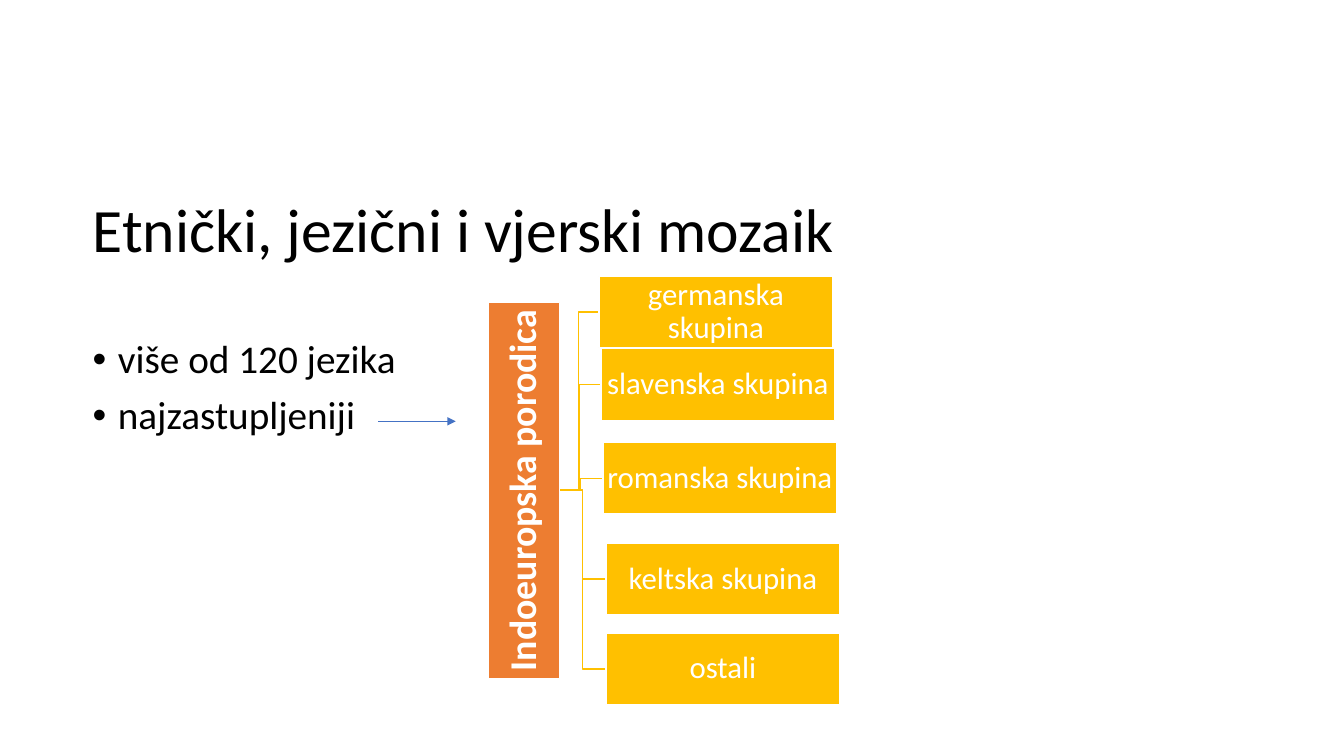
from lxml import etree
from pptx import Presentation
from pptx.dml.color import RGBColor
from pptx.enum.shapes import MSO_CONNECTOR, MSO_SHAPE
from pptx.enum.text import MSO_ANCHOR, PP_ALIGN
from pptx.oxml.ns import qn
from pptx.util import Inches, Pt

RECTANGLE = MSO_SHAPE.RECTANGLE
STRAIGHT = MSO_CONNECTOR.STRAIGHT
MIDDLE, TOP = MSO_ANCHOR.MIDDLE, MSO_ANCHOR.TOP
CENTER, LEFT = PP_ALIGN.CENTER, PP_ALIGN.LEFT

COLORS = {
    "text": "000000",
    "white": "FFFFFF",
    "family": "ED7D31",
    "group": "FFC000",
    "arrow": "4472C4",
}


class SlideBuilder:
    font_name = "Calibri"
    line_spacing = 0.9

    def __init__(self, slide):
        self.slide = slide

    def color(self, name):
        return RGBColor.from_string(COLORS[name])

    def set_line(self, line, color, width):
        line.color.rgb = self.color(color)
        line.width = Pt(width)

    def fill_text(self, shape, lines, size, color, align=LEFT, anchor=TOP,
                  margin=0, bold=False, bullets=False):
        frame = shape.text_frame
        frame.word_wrap = True
        frame.vertical_anchor = anchor
        frame.margin_left = frame.margin_right = Inches(margin)
        frame.margin_top = frame.margin_bottom = Inches(margin)
        for index, line in enumerate(lines):
            paragraph = frame.add_paragraph() if index else frame.paragraphs[0]
            paragraph.text = line
            paragraph.alignment = align
            paragraph.line_spacing = self.line_spacing
            if index:
                paragraph.space_before = Pt(10)
            if bullets:
                self.add_bullet(paragraph)
            paragraph.font.name = self.font_name
            paragraph.font.size = Pt(size)
            paragraph.font.bold = bold
            paragraph.font.color.rgb = self.color(color)

    def add_bullet(self, paragraph):
        properties = paragraph._p.get_or_add_pPr()
        properties.set("marL", str(Inches(0.25)))
        properties.set("indent", str(Inches(-0.25)))
        etree.SubElement(properties, qn("a:buFont")).set("typeface", "Arial")
        etree.SubElement(properties, qn("a:buChar")).set("char", "•")

    def text(self, left, top, width, height, lines, size, bullets=False):
        box = self.slide.shapes.add_textbox(
            Inches(left), Inches(top), Inches(width), Inches(height))
        self.fill_text(box, lines, size, "text", bullets=bullets)

    def block(self, left, top, width, height, label, fill, size,
              bold=False, rotation=0):
        shape = self.slide.shapes.add_shape(
            RECTANGLE, Inches(left), Inches(top), Inches(width), Inches(height))
        shape.shadow.inherit = False
        shape.rotation = rotation
        shape.fill.solid()
        shape.fill.fore_color.rgb = self.color(fill)
        self.set_line(shape.line, "white", 1)
        self.fill_text(shape, [label], size, "white", CENTER, MIDDLE, 0.02, bold)

    def branch(self, start_x, start_y, end_x, end_y):
        middle_x = (start_x + end_x) / 2
        corners = [(middle_x, start_y), (middle_x, end_y), (end_x, end_y)]
        builder = self.slide.shapes.build_freeform(
            Inches(start_x), Inches(start_y))
        builder.add_line_segments(
            [(Inches(x), Inches(y)) for x, y in corners], close=False)
        shape = builder.convert_to_shape()
        shape.shadow.inherit = False
        shape.fill.background()
        self.set_line(shape.line, "group", 1)

    def arrow(self, start_x, start_y, end_x, end_y):
        connector = self.slide.shapes.add_connector(
            STRAIGHT, Inches(start_x), Inches(start_y),
            Inches(end_x), Inches(end_y))
        self.set_line(connector.line, "arrow", 0.5)
        line = connector.line._get_or_add_ln()
        etree.SubElement(line, qn("a:tailEnd")).set("type", "triangle")
        etree.SubElement(connector._element.spPr, qn("a:effectLst"))


def main():
    presentation = Presentation()
    presentation.slide_width = Inches(13.33)
    presentation.slide_height = Inches(7.5)
    slide = presentation.slides.add_slide(presentation.slide_layouts[6])
    builder = SlideBuilder(slide)

    # Title and bullet list
    builder.text(0.92, 1.98, 11.5, 0.84,
                 ["Etnički, jezični i vjerski mozaik"], 44)
    builder.text(0.92, 3.37, 5.67, 3.62,
                 ["više od 120 jezika", "najzastupljeniji"], 28, bullets=True)

    # Language groups: label, left, top
    groups = [
        ("germanska skupina", 5.94, 2.74),
        ("slavenska skupina", 5.96, 3.46),
        ("romanska skupina", 5.98, 4.39),
        ("keltska skupina", 6.01, 5.39),
        ("ostali", 6.01, 6.28),
    ]
    group_width, block_height = 2.32, 0.71

    # Branches from the family to each group
    for label, left, top in groups:
        builder.branch(5.54, 4.86, left, top + block_height / 2)

    # Language family, turned to read upwards
    builder.block(3.33, 4.51, 3.73, block_height, "Indoeuropska porodica",
                  "family", 27, bold=True, rotation=270)

    # Group blocks
    for label, left, top in groups:
        builder.block(left, top, group_width, block_height, label, "group", 22)

    # Arrow from the list to the diagram
    builder.arrow(3.75, 4.18, 4.52, 4.18)

    presentation.save("out.pptx")


if __name__ == "__main__":
    main()
